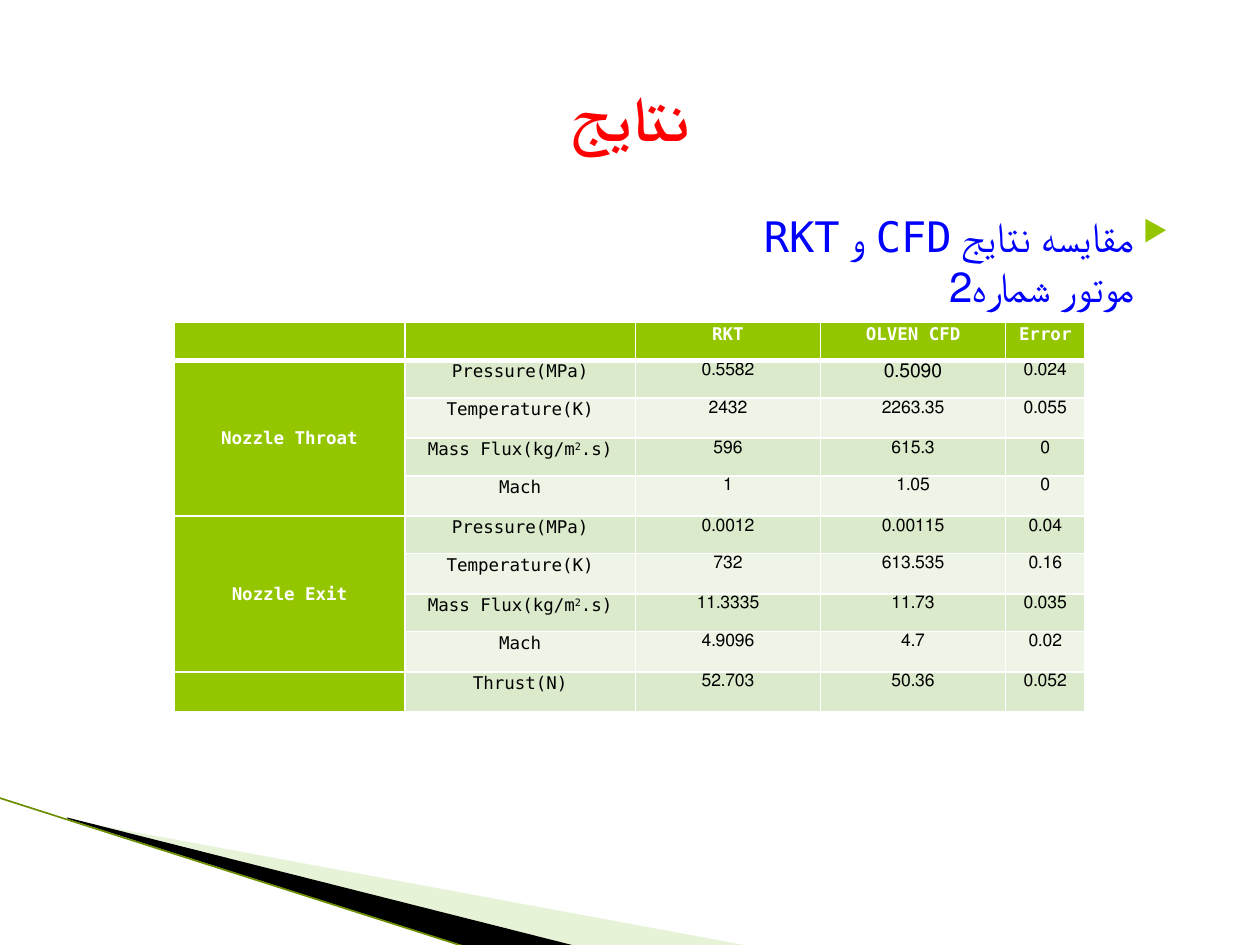
"""Build the results slide comparing two solvers for motor number 2."""
from dataclasses import dataclass

from lxml import etree
from pptx import Presentation
from pptx.dml.color import RGBColor
from pptx.enum.shapes import MSO_CONNECTOR
from pptx.enum.text import MSO_ANCHOR, PP_ALIGN
from pptx.oxml.ns import qn
from pptx.util import Cm, Pt

STRAIGHT = MSO_CONNECTOR.STRAIGHT
MIDDLE = MSO_ANCHOR.MIDDLE
CENTER, RIGHT = PP_ALIGN.CENTER, PP_ALIGN.RIGHT


@dataclass(frozen=True)
class Theme:
    font: str = "DejaVu Sans Mono"
    title: str = "FF0000"
    body: str = "0000FF"
    accent: str = "94C600"
    band_dark: str = "DCEACC"
    band_light: str = "EEF5E7"
    wedge: str = "C3E19D"
    edge: str = "6B8F00"
    black: str = "000000"
    white: str = "FFFFFF"
    title_size: float = 36
    body_size: float = 24
    cell_size: float = 10
    large_cell_size: float = 11


THEME = Theme()

HEADER = ["", "", "RKT", "OLVEN CFD", "Error"]
QUANTITIES = ["Pressure(MPa)", "Temperature(K)", "Mass Flux(kg/m^2^.s)", "Mach"]
SECTIONS = {
    "Nozzle Throat": [
        ("0.5582", "0.5090", "0.024"),
        ("2432", "2263.35", "0.055"),
        ("596", "615.3", "0"),
        ("1", "1.05", "0"),
    ],
    "Nozzle Exit": [
        ("0.0012", "0.00115", "0.04"),
        ("732", "613.535", "0.16"),
        ("11.3335", "11.73", "0.035"),
        ("4.9096", "4.7", "0.02"),
    ],
}
THRUST = ["", "Thrust(N)", "52.703", "50.36", "0.052"]
COL_WIDTHS = [4.65, 4.65, 3.73, 3.73, 1.6]
ROW_HEIGHTS = [0.69] + [0.76, 0.81] * 4 + [0.81]
LARGE_CELL = (1, 3)


def rgb(value):
    return RGBColor.from_string(value)


def style_runs(p, size, color, bold=False):
    for r in p.runs:
        r.font.name = THEME.font
        r.font.size = Pt(size)
        r.font.bold = bold
        r.font.color.rgb = rgb(color)


def add_text(slide, box, text, align):
    tf = slide.shapes.add_textbox(*map(Cm, box)).text_frame
    tf.word_wrap = True
    p = tf.paragraphs[0]
    p.text = text
    p.alignment = align
    return tf, p


def add_bullet(p, color):
    pPr = p._p.get_or_add_pPr()
    pPr.set("rtl", "1")
    pPr.set("marL", str(Cm(1.02)))
    pPr.set("indent", str(Cm(-0.71)))
    clr = etree.SubElement(pPr, qn("a:buClr"))
    etree.SubElement(clr, qn("a:srgbClr"), val=color)
    etree.SubElement(pPr, qn("a:buSzPct"), val="68000")
    etree.SubElement(pPr, qn("a:buChar"), char="▶")


def add_polygon(slide, points, color, alpha=None):
    pts = [(Cm(x), Cm(y)) for x, y in points]
    builder = slide.shapes.build_freeform(*pts[0])
    builder.add_line_segments(pts[1:], close=True)
    sp = builder.convert_to_shape()
    sp.shadow.inherit = False
    sp.fill.solid()
    sp.fill.fore_color.rgb = rgb(color)
    sp.line.fill.background()
    if alpha:
        clr = sp._element.spPr.find(".//" + qn("a:srgbClr"))
        etree.SubElement(clr, qn("a:alpha"), val=str(alpha * 1000))


def add_line(slide, ends, color, width):
    line = slide.shapes.add_connector(STRAIGHT, *map(Cm, ends))
    line.line.color.rgb = rgb(color)
    line.line.width = Pt(width)
    etree.SubElement(line._element.spPr, qn("a:effectLst"))


def set_borders(cell, bottom, top):
    tcPr = cell._tc.get_or_add_tcPr()
    widths = {"a:lnL": 1, "a:lnR": 1, "a:lnT": top, "a:lnB": bottom}
    for i, (tag, width) in enumerate(widths.items()):
        ln = etree.Element(qn(tag), w=str(Pt(width)))
        fill = etree.SubElement(ln, qn("a:solidFill"))
        etree.SubElement(fill, qn("a:srgbClr"), val=THEME.white)
        tcPr.insert(i, ln)


def fill_cell(cell, text, row, col):
    head = row == 0 or col == 0
    band = THEME.band_dark if row % 2 else THEME.band_light
    cell.fill.solid()
    cell.fill.fore_color.rgb = rgb(THEME.accent if head else band)
    set_borders(cell, bottom=3 if row == 0 else 1, top=3 if row == 1 else 1)
    cell.margin_left = cell.margin_right = Cm(0.18)
    cell.margin_top = cell.margin_bottom = 0
    p = cell.text_frame.paragraphs[0]
    for i, part in enumerate(text.split("^")):
        r = p.add_run()
        r.text = part
        if i % 2:
            r.font._element.set("baseline", "30000")
    p.alignment = CENTER
    p.line_spacing = 1.07
    if col == 0:
        cell.vertical_anchor = MIDDLE
    else:
        p.space_after = Pt(8)
        p._p.get_or_add_pPr().set("rtl", "1")
    size = THEME.large_cell_size if (row, col) == LARGE_CELL else THEME.cell_size
    style_runs(p, size, THEME.white if head else THEME.black, head)


def table_rows():
    rows = [HEADER]
    for name, values in SECTIONS.items():
        for i, (quantity, numbers) in enumerate(zip(QUANTITIES, values)):
            rows.append(["" if i else name, quantity, *numbers])
    return rows + [THRUST]


def add_results_table(slide):
    rows = table_rows()
    box = (3.51, 6.5, sum(COL_WIDTHS), sum(ROW_HEIGHTS))
    table = slide.shapes.add_table(len(rows), len(HEADER), *map(Cm, box)).table
    for column, width in zip(table.columns, COL_WIDTHS):
        column.width = Cm(width)
    for row, height in zip(table.rows, ROW_HEIGHTS):
        row.height = Cm(height)
    for i, row in enumerate(rows):
        for j, text in enumerate(row):
            fill_cell(table.cell(i, j), text, i, j)
    count = len(QUANTITIES)
    for k in range(len(SECTIONS)):
        top = 1 + k * count
        table.cell(top, 0).merge(table.cell(top + count - 1, 0))


def main():
    prs = Presentation()
    prs.slide_width, prs.slide_height = Cm(25.4), Cm(19.05)
    slide = prs.slides.add_slide(prs.slide_layouts[6])

    add_polygon(slide, [(1.4, 16.53), (15.11, 19.07), (11.58, 19.07), (1.4, 16.51)],
                THEME.wedge, alpha=40)
    add_polygon(slide, [(1.35, 16.48), (11.61, 19.07), (9.45, 19.1), (1.37, 16.51)],
                THEME.black)
    add_line(slide, (-0.03, 16.08, 9.42, 19.1), THEME.edge, 0.95)

    tf, p = add_text(slide, (1.27, 4.11, 22.86, 12.57),
                     "مقایسه نتایج CFD و RKT\vموتور شماره2", RIGHT)
    add_bullet(p, THEME.accent)
    style_runs(p, THEME.body_size, THEME.body)

    tf, p = add_text(slide, (1.27, 0.76, 22.86, 3.18), "نتایج", CENTER)
    tf.vertical_anchor = MIDDLE
    style_runs(p, THEME.title_size, THEME.title, bold=True)

    add_results_table(slide)
    prs.save("out.pptx")


if __name__ == "__main__":
    main()
